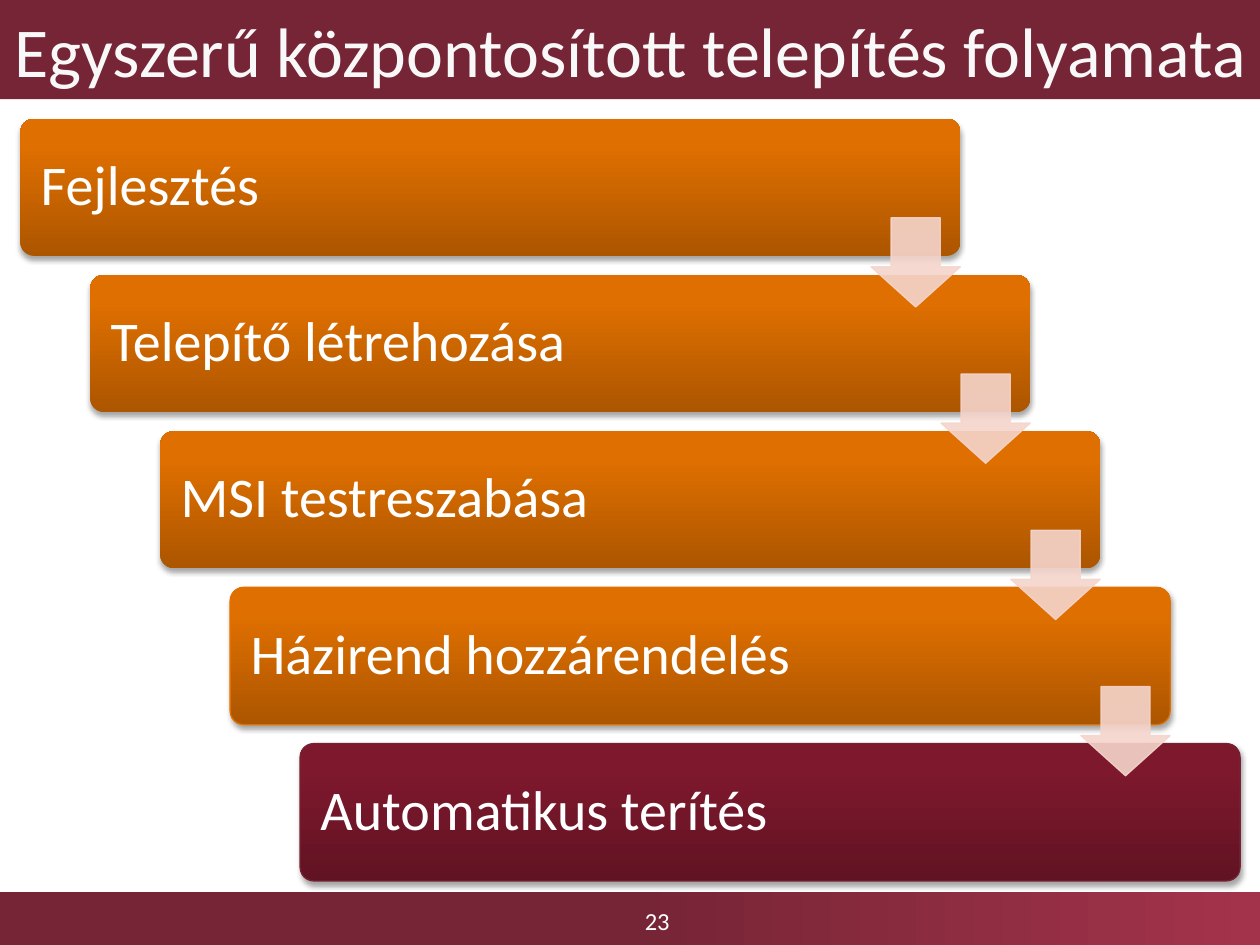
"""Build the slide showing the five steps of a simple centralised deployment."""
from lxml import etree
from pptx import Presentation
from pptx.dml.color import RGBColor
from pptx.enum.shapes import MSO_SHAPE
from pptx.enum.text import MSO_ANCHOR, MSO_AUTO_SIZE, PP_ALIGN
from pptx.oxml import parse_xml
from pptx.oxml.ns import nsdecls, qn
from pptx.util import Cm, Pt

LEFT, CENTER = PP_ALIGN.LEFT, PP_ALIGN.CENTER
MIDDLE, NO_FIT = MSO_ANCHOR.MIDDLE, MSO_AUTO_SIZE.NONE
RECTANGLE, ROUNDED = MSO_SHAPE.RECTANGLE, MSO_SHAPE.ROUNDED_RECTANGLE
DOWN_ARROW = MSO_SHAPE.DOWN_ARROW

COLORS = {
    "band": "762536", "band_end": "A3334B", "title": "F8F8F8", "text": "FFFFFF",
    "step_dark": "AC5600", "step_mid": "DF6F00", "step_light": "E07000",
    "last_dark": "611323", "last_mid": "7E182D", "last_light": "81162D",
    "step_line": "E17000", "last_line": "752234", "arrow": "F5D5CC",
}
STEPS = [
    ("Fejlesztés", "step", False),
    ("Telepítő létrehozása", "step", False),
    ("MSI testreszabása", "step", False),
    ("Házirend hozzárendelés", "step", True),
    ("Automatikus terítés", "last", True),
]
STEP_WIDTH, STEP_HEIGHT, ARROW_SIZE = 18.95, 2.77, 1.8
SHADOW = (
    f'<a:effectLst {nsdecls("a")}><a:outerShdw blurRad="39400" dist="22900" dir="5400000" '
    'rotWithShape="0"><a:srgbClr val="000000"><a:alpha val="35000"/></a:srgbClr>'
    "</a:outerShdw></a:effectLst>"
)


def write(shape, text, size, color="text", align=CENTER, inset=0, spacing=1.0):
    """Put one formatted paragraph into a shape."""
    frame = shape.text_frame
    frame.word_wrap, frame.auto_size, frame.vertical_anchor = True, NO_FIT, MIDDLE
    frame.margin_left = frame.margin_right = Cm(inset)
    frame.margin_top = frame.margin_bottom = Cm(inset)
    para = frame.paragraphs[0]
    para.alignment, para.line_spacing = align, spacing
    span = para.add_run()
    span.text = text
    span.font.name, span.font.size = "Calibri", Pt(size)
    span.font.color.rgb = RGBColor.from_string(COLORS[color])


def fill_gradient(shape, stops, angle):
    """Fill a new shape with (percent, color name) stops."""
    stop_xml = "".join(
        f'<a:gs pos="{percent * 1000}"><a:srgbClr val="{COLORS[name]}"/></a:gs>'
        for percent, name in stops
    )
    shape._element.spPr.insert(2, parse_xml(
        f'<a:gradFill {nsdecls("a")} rotWithShape="1"><a:gsLst>{stop_xml}</a:gsLst>'
        f'<a:lin ang="{angle * 60000}" scaled="0"/></a:gradFill>'
    ))


deck = Presentation()
deck.slide_width, deck.slide_height = Cm(25.4), Cm(19.05)
page = deck.slides.add_slide(deck.slide_layouts[5])

footer = page.shapes.add_shape(RECTANGLE, 0, Cm(17.98), Cm(25.4), Cm(1.07))
fill_gradient(footer, [(0, "band"), (50, "band"), (100, "band_end")], 0)
footer.line.fill.background()
footer.shadow.inherit = False
number = page.shapes.add_textbox(Cm(9.12), Cm(18.06), Cm(8.26), Cm(0.99))
write(number, "23", size=14)

title = page.shapes.title
title.left, title.top, title.width, title.height = 0, 0, Cm(25.4), Cm(2)
title.fill.solid()
title.fill.fore_color.rgb = RGBColor.from_string(COLORS["band"])
write(title, "Egyszerű központosított telepítés folyamata", size=40, color="title")

corners = [(0.41 + 1.41 * index, 2.39 + 3.15 * index) for index in range(len(STEPS))]
for (left, top), (label, tone, outlined) in zip(corners, STEPS):
    step = page.shapes.add_shape(
        ROUNDED, Cm(left), Cm(top), Cm(STEP_WIDTH), Cm(STEP_HEIGHT))
    step.adjustments[0] = 0.1
    fill_gradient(
        step, [(0, f"{tone}_dark"), (80, f"{tone}_mid"), (100, f"{tone}_light")], 270)
    if outlined:
        step.line.color.rgb = RGBColor.from_string(COLORS[f"{tone}_line"])
        step.line.width = Pt(0.75)
    else:
        step.line.fill.background()
    step._element.spPr.append(parse_xml(SHADOW))
    write(step, label, size=32, align=LEFT, inset=0.33, spacing=0.9)

for left, top in corners[:-1]:
    arrow = page.shapes.add_shape(
        DOWN_ARROW, Cm(left + STEP_WIDTH - ARROW_SIZE), Cm(top + 2),
        Cm(ARROW_SIZE), Cm(ARROW_SIZE))
    arrow.adjustments[0], arrow.adjustments[1] = 0.55, 0.45
    arrow.fill.solid()
    arrow.line.width = Pt(0.75)
    for color in (arrow.fill.fore_color, arrow.line.color):
        color.rgb = RGBColor.from_string(COLORS["arrow"])
    for node in arrow._element.spPr.iter(qn("a:srgbClr")):
        etree.SubElement(node, qn("a:alpha"), val="90000")
    arrow.shadow.inherit = False

deck.save("out.pptx")
